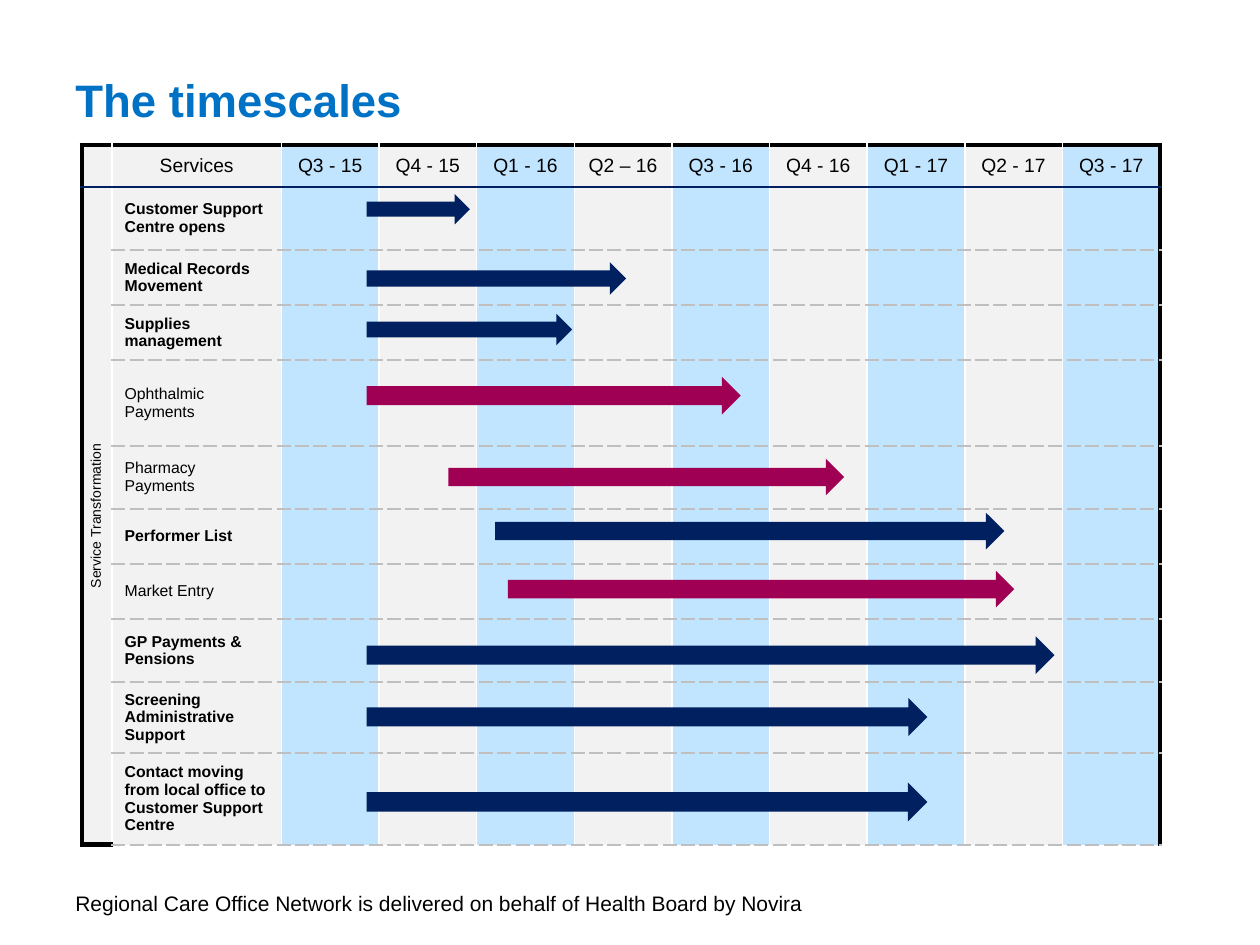
from lxml.etree import SubElement
from pptx import Presentation
from pptx.dml.color import RGBColor
from pptx.enum.shapes import MSO_SHAPE
from pptx.enum.text import MSO_ANCHOR, PP_ALIGN
from pptx.oxml.ns import qn
from pptx.util import Pt

NAVY, PLUM, BLUE = "002060", "A00054", "0072C6"
BLACK, WHITE, GREY, SKY = "000000", "FFFFFF", "F2F2F2", "C1E5FF"

QUARTERS = ["Q3 - 15", "Q4 - 15", "Q1 - 16", "Q2 – 16", "Q3 - 16",
            "Q4 - 16", "Q1 - 17", "Q2 - 17", "Q3 - 17"]
HEADER_H, GROUP_W, SERVICE_W, QUARTER_W = 24, 17, 96.8, 55.8
START = 162.7  # common start of most services, from the left of the chart

# service, bold, row height, arrow: left in chart, top in row, width, height
SERVICES = [
    ("Customer Support Centre opens", True, 36, (START, 4.1, 59, 17.3)),
    ("Medical Records Movement", True, 31.5, (START, 7, 148.3, 18.7)),
    ("Supplies management", True, 31.5, (START, 5, 117.4, 18)),
    ("Ophthalmic Payments", False, 49, (START, 9.5, 213.8, 21.6)),
    ("Pharmacy Payments", False, 36, (209.5, 7.3, 226.1, 20.9)),
    ("Performer List", True, 31.5, (236.2, 2.2, 290.9, 20.9)),
    ("Market Entry", False, 31.5, (243.4, 3.9, 289.4, 20.9)),
    ("GP Payments & Pensions", True, 36, (START, 9.8, 393.1, 21.6)),
    ("Screening Administrative Support", True, 40.5, (START, 9.1, 320.4, 21.6)),
    ("Contact moving from local office to Customer Support Centre", True, 52.5,
     (START, 16.8, 320.4, 22.3)),
]

EDGE, GAP, RULE = (BLACK, 3, "solid"), (WHITE, 1, "solid"), (NAVY, 1.5, "solid")
DASH = ("BFBFBF", 1.5, "dash")


def rgb(value):
    return RGBColor.from_string(value)


def write(tf, text, size, color=BLACK, bold=False, align=PP_ALIGN.LEFT):
    p = tf.paragraphs[0]
    p.alignment = align
    r = p.add_run()
    r.text = text
    r.font.color.rgb = rgb(color)
    for name, value in {"name": "Arial", "size": Pt(size), "bold": bold}.items():
        setattr(r.font, name, value)


def add_label(s, box, text, size, **style):
    tf = s.shapes.add_textbox(*map(Pt, box)).text_frame
    tf.word_wrap = True
    tf.vertical_anchor = MSO_ANCHOR.MIDDLE
    write(tf, text, size, **style)


def set_borders(cell, **borders):
    """Borders must come before the fill in the cell properties."""
    tc_pr = cell._tc.get_or_add_tcPr()
    for side in "LRTB":
        color, width, dash = borders[side]
        ln = SubElement(tc_pr, qn(f"a:ln{side}"), w=str(Pt(width)))
        fill = SubElement(ln, qn("a:solidFill"))
        SubElement(fill, qn("a:srgbClr"), val=color)
        SubElement(ln, qn("a:prstDash"), val=dash)


def format_cell(cell, row, col, last_row, last_col):
    is_group = col == 0 and row > 0
    if row == 0:
        top, bottom = EDGE, RULE
    else:
        top = RULE if row == 1 or is_group else DASH
        bottom = EDGE if is_group else DASH
    set_borders(cell, L=GAP if col else EDGE, R=EDGE if col == last_col else GAP,
                T=top, B=bottom)
    cell.fill.solid()
    cell.fill.fore_color.rgb = rgb(SKY if col > 1 and col % 2 == 0 else GREY)
    cell.vertical_anchor = MSO_ANCHOR.MIDDLE
    # Small empty paragraphs keep the rows from growing
    if not cell.text:
        SubElement(cell.text_frame.paragraphs[0]._p, qn("a:endParaRPr"), sz="900")


def add_grid(s, box):
    widths = [GROUP_W, SERVICE_W] + [QUARTER_W] * len(QUARTERS)
    heights = [HEADER_H] + [service[2] for service in SERVICES]
    table = s.shapes.add_table(len(heights), len(widths), *map(Pt, box)).table
    table.first_row = table.horz_banding = False
    for column, width in zip(table.columns, widths):
        column.width = Pt(width)
    for row, height in zip(table.rows, heights):
        row.height = Pt(height)

    # Header, service names and the upright group name
    for c, text in enumerate(["Services"] + QUARTERS, 1):
        write(table.cell(0, c).text_frame, text, 11, align=PP_ALIGN.CENTER)
    for r, (name, bold, *_) in enumerate(SERVICES, 1):
        write(table.cell(r, 1).text_frame, name, 9, bold=bold)
    group = table.cell(1, 0)
    group.merge(table.cell(len(SERVICES), 0))
    write(group.text_frame, "Service Transformation", 8, align=PP_ALIGN.CENTER)
    group._tc.get_or_add_tcPr().set("vert", "vert270")

    for r in range(len(heights)):
        for c in range(len(widths)):
            format_cell(table.cell(r, c), r, c, len(heights) - 1, len(widths) - 1)


def add_arrows(s, box):
    left, row_top = box[0], box[1] + HEADER_H
    for _, bold, height, (x, y, w, h) in SERVICES:
        sp = s.shapes.add_shape(MSO_SHAPE.RIGHT_ARROW, Pt(left + x),
                                Pt(row_top + y), Pt(w), Pt(h))
        sp.shadow.inherit = False
        sp.fill.solid()
        sp.fill.fore_color.rgb = rgb(NAVY if bold else PLUM)
        sp.line.fill.background()
        row_top += height


def add_timeline(s, box):
    add_grid(s, box)
    add_arrows(s, box)


def main():
    prs = Presentation()
    prs.slide_width, prs.slide_height = Pt(720), Pt(540)
    s = prs.slides.add_slide(prs.slide_layouts[6])
    # Title
    add_label(s, (36, 30.5, 580, 52.5), "The timescales", 26, color=BLUE, bold=True)
    # Timeline
    add_timeline(s, (46.8, 82.8, 616, 400))
    # Footer
    add_label(s, (36, 505.5, 460, 21.6),
              "Regional Care Office Network is delivered on behalf of "
              "Health Board by Novira", 12)
    prs.save("out.pptx")


if __name__ == "__main__":
    main()
